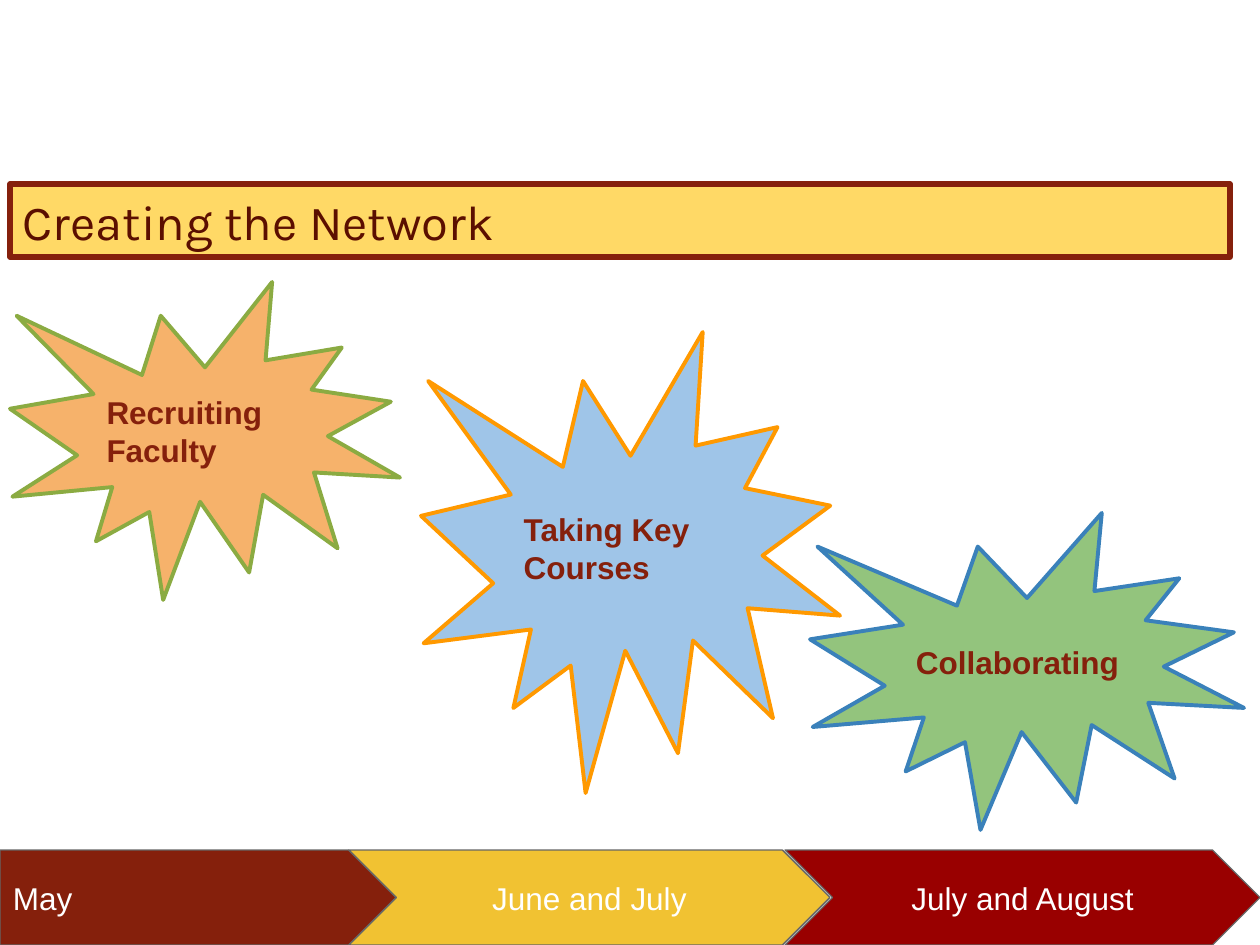
"""Build the "Creating the Network" timeline slide."""
from pptx import Presentation
from pptx.dml.color import RGBColor
from pptx.enum.shapes import MSO_SHAPE
from pptx.enum.text import MSO_ANCHOR, PP_ALIGN
from pptx.util import Emu, Inches, Pt

PIXELS_PER_INCH = 126
SLIDE_SIZE = (1260, 945)
INSET = 13

BURSTS = [
    ("Recruiting Faculty", (10, 282, 390, 318), "F6B26B", "8BAB42"),
    ("Taking Key Courses", (421, 332, 419, 461), "9FC5E8", "FF9900"),
    ("Collaborating", (810, 513, 434, 317), "93C47D", "3A81BA"),
]
PERIOD_TOP, PERIOD_HEIGHT = 850, 95
PERIODS = [
    ("May", 0, 396, MSO_SHAPE.PENTAGON, "85200C", PP_ALIGN.LEFT),
    ("June and July", 349, 481, MSO_SHAPE.CHEVRON, "F1C232", PP_ALIGN.CENTER),
    ("July and August", 785, 475, MSO_SHAPE.CHEVRON, "990000", PP_ALIGN.CENTER),
]
TITLE = ("Creating the Network", (10, 184, 1220, 73), "FFD966", "85200C")


def px(length):
    return Emu(round(length * Inches(1) / PIXELS_PER_INCH))


def color(value):
    return RGBColor.from_string(value)


def add_label(slide, kind, text, box, fill, line, line_width, font_name, size,
              text_color, bold=False, alignment=PP_ALIGN.LEFT):
    shape = slide.shapes.add_shape(kind, *map(px, box))
    shape.shadow.inherit = False
    shape.fill.solid()
    shape.fill.fore_color.rgb = color(fill)
    shape.line.color.rgb = color(line)
    shape.line.width = Pt(line_width)
    frame = shape.text_frame
    frame.word_wrap = True
    frame.vertical_anchor = MSO_ANCHOR.MIDDLE
    frame.margin_left = frame.margin_right = px(INSET)
    frame.margin_top = frame.margin_bottom = px(INSET)
    paragraph = frame.paragraphs[0]
    paragraph.alignment = alignment
    run = paragraph.add_run()
    run.text = text
    run.font.name = font_name
    run.font.size = Pt(size)
    run.font.bold = bold
    run.font.color.rgb = color(text_color)


def main():
    presentation = Presentation()
    presentation.slide_width, presentation.slide_height = map(px, SLIDE_SIZE)
    slide = presentation.slides.add_slide(presentation.slide_layouts[6])
    for text, box, fill, line in BURSTS:
        add_label(slide, MSO_SHAPE.EXPLOSION1, text, box, fill, line, 2.25,
                  "Arial", 18, "85200C", bold=True)
    for text, left, width, kind, fill, alignment in PERIODS:
        box = (left, PERIOD_TOP, width, PERIOD_HEIGHT)
        add_label(slide, kind, text, box, fill, "666666", 0.75,
                  "Arial", 18, "FFFFFF", alignment=alignment)
    add_label(slide, MSO_SHAPE.RECTANGLE, *TITLE, 3, "Karla", 28, "5B0F00")
    presentation.save("out.pptx")


if __name__ == "__main__":
    main()
